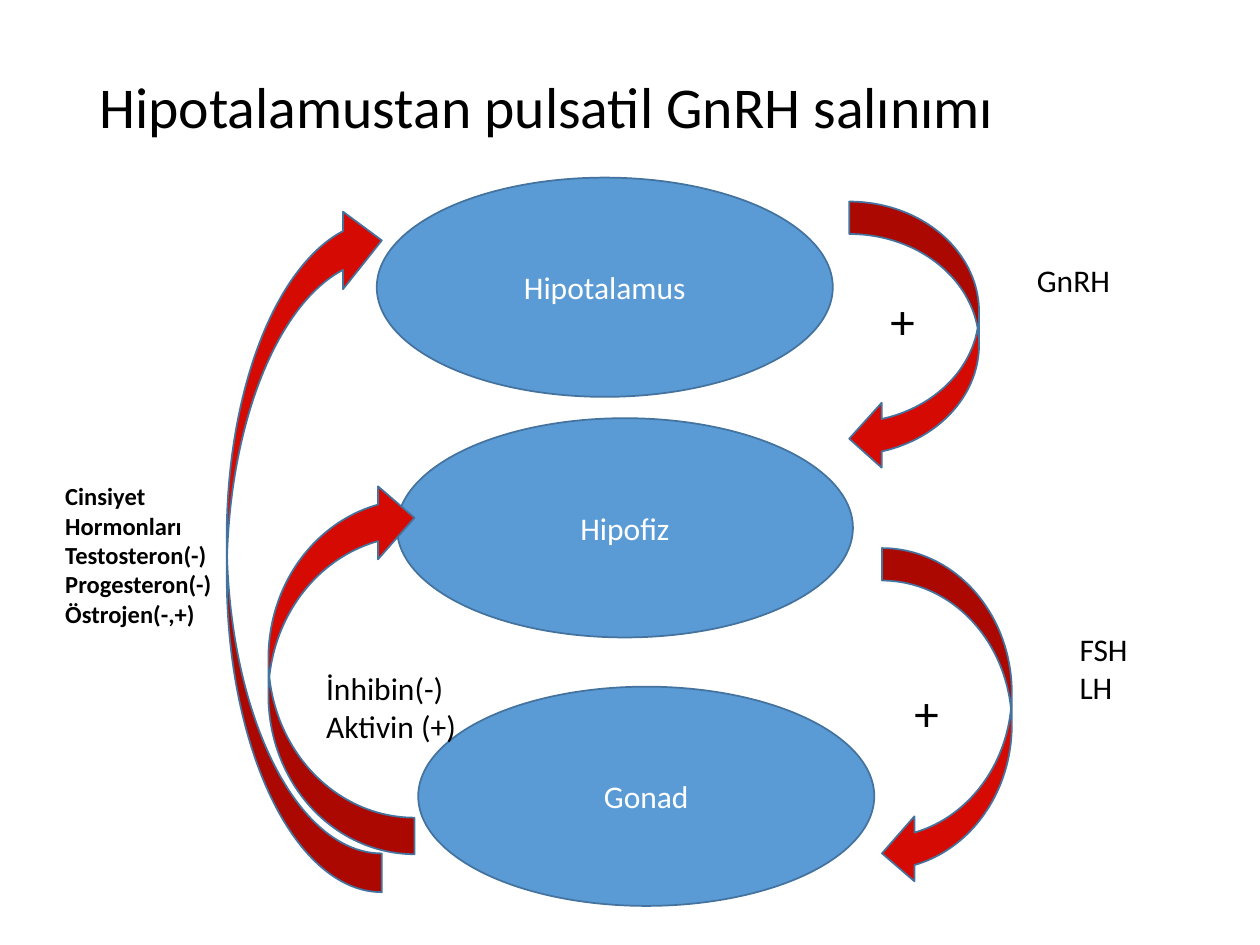
from lxml.etree import SubElement
from pptx import Presentation
from pptx.dml.color import RGBColor
from pptx.enum.shapes import MSO_SHAPE
from pptx.enum.text import MSO_ANCHOR, PP_ALIGN
from pptx.util import Pt

THEME = {
    "font": "Calibri",
    "text": RGBColor(0x00, 0x00, 0x00),
    "on_fill": RGBColor(0xFF, 0xFF, 0xFF),
    "organ": RGBColor(0x5B, 0x9B, 0xD5),
    "arrow": RGBColor(0xD5, 0x0A, 0x02),
    "outline": RGBColor(0x43, 0x73, 0x9E),
    "title": 33, "plus": 28, "body": 18, "small": 14,
}

# Content; boxes are left, top, width, height in points
TITLE = "Hipotalamustan pulsatil GnRH salınımı"
TITLE_BOX = (49.7, 28.8, 620.6, 104.4)

ORGAN_SIZE = (260.6, 125.3)
ORGANS = [  # name, left, top
    ("Hipotalamus", 215.3, 101.5),
    ("Hipofiz", 226.8, 239),
    ("Gonad", 239, 392.4),
]
STIMULATION = [(485.3, 115.2, 74.2, 154.1), (504, 313.2, 74.2, 193)]
FEEDBACK = [(129.6, 115.2, 88.6, 394.6), (153.4, 275, 83.5, 213.1)]
LABELS = [  # lines, box, size, bold
    (["GnRH"], (585.4, 145.4, 85, 29), "body", False),
    (["+"], (501.8, 162.7, 54.7, 63.4), "plus", False),
    (["+"], (515.5, 386.6, 54.7, 63.4), "plus", False),
    (["FSH", "LH"], (609.8, 356.4, 85, 51), "body", False),
    (["Cinsiyet Hormonları", "Testosteron(-)", "Progesteron(-)", "Östrojen(-,+)"],
     (30.2, 271.4, 113.8, 113.8), "small", True),
    (["İnhibin(-)", "Aktivin (+)"], (179.3, 378.7, 103, 72.7), "body", False),
]


def write(tf, lines, size, color="text", bold=False, align=PP_ALIGN.LEFT):
    tf.word_wrap = True
    tf.text = "\n".join(lines)
    for p in tf.paragraphs:
        p.alignment = align
        for r in p.runs:
            r.font.name = THEME["font"]
            r.font.size = Pt(THEME[size])
            r.font.bold = bold
            r.font.color.rgb = THEME[color]


def add_text(s, lines, box, size, bold=False):
    tf = s.shapes.add_textbox(*map(Pt, box)).text_frame
    write(tf, lines, size, bold=bold)
    return tf


def add_shape(s, kind, box, fill):
    sp = s.shapes.add_shape(kind, *map(Pt, box))
    sp.shadow.inherit = False
    sp.fill.solid()
    sp.fill.fore_color.rgb = THEME[fill]
    sp.line.color.rgb = THEME["outline"]
    sp.line.width = Pt(1)
    return sp


def add_organ(s, name, left, top):
    sp = add_shape(s, MSO_SHAPE.OVAL, (left, top, *ORGAN_SIZE), "organ")
    sp.text_frame.vertical_anchor = MSO_ANCHOR.MIDDLE
    write(sp.text_frame, [name], "body", "on_fill", align=PP_ALIGN.CENTER)


def add_feedback(s, box):
    # Turned and mirrored so that the arrow points up
    sp = add_shape(s, MSO_SHAPE.CURVED_RIGHT_ARROW, box, "arrow")
    sp.rotation = 180
    sp._element.spPr.xfrm.set("flipH", "1")


def main():
    prs = Presentation()
    prs.slide_width, prs.slide_height = Pt(720), Pt(540)
    s = prs.slides.add_slide(prs.slide_layouts[6])

    # Title, raised above the middle of its box
    tf = add_text(s, [TITLE], TITLE_BOX, "title")
    tf.vertical_anchor = MSO_ANCHOR.MIDDLE
    tf.margin_bottom = Pt(39.6)
    tf.paragraphs[0].line_spacing = 0.9

    # Organs of the axis, then the arrows between them
    for organ in ORGANS:
        add_organ(s, *organ)
    for box in STIMULATION:
        add_shape(s, MSO_SHAPE.CURVED_LEFT_ARROW, box, "arrow")
    for box in FEEDBACK:
        add_feedback(s, box)

    # Hormone labels
    for label in LABELS:
        add_text(s, *label)

    prs.save("out.pptx")


if __name__ == "__main__":
    main()
